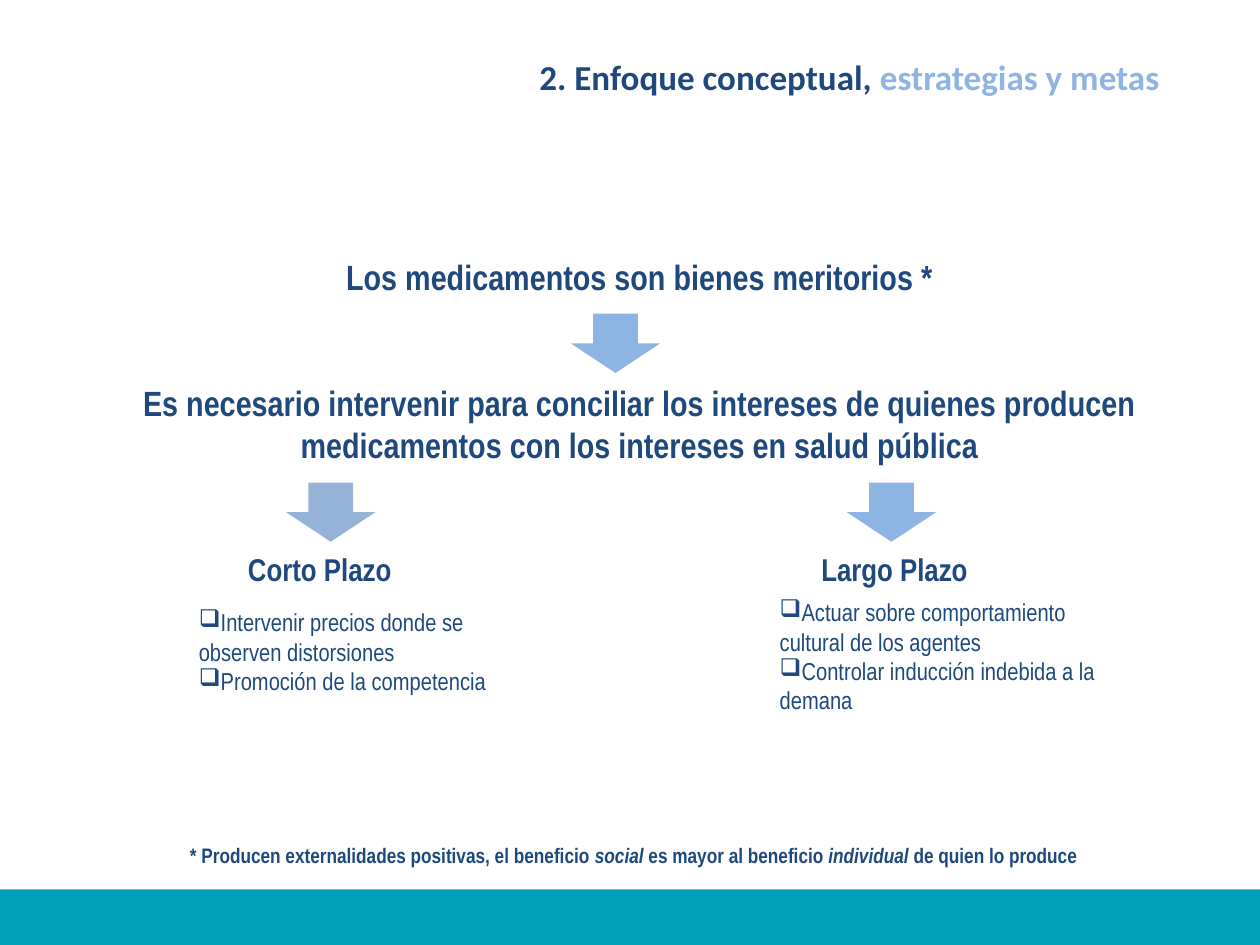
"""Build the slide on the conceptual approach, strategies and goals for medicines."""
from lxml import etree
from pptx import Presentation
from pptx.dml.color import RGBColor
from pptx.enum.shapes import MSO_SHAPE
from pptx.enum.text import PP_ALIGN
from pptx.oxml.ns import qn
from pptx.util import Inches, Pt

RECTANGLE, DOWN_ARROW = MSO_SHAPE.RECTANGLE, MSO_SHAPE.DOWN_ARROW
LEFT, CENTER, RIGHT = PP_ALIGN.LEFT, PP_ALIGN.CENTER, PP_ALIGN.RIGHT
NAVY = RGBColor(0x1F, 0x49, 0x7D)
SKY = RGBColor(0x8E, 0xB4, 0xE3)
STEEL = RGBColor(0x95, 0xB3, 0xD7)
TEAL = RGBColor(0x00, 0xA0, 0xBA)

prs = Presentation()
prs.slide_width, prs.slide_height = Inches(10), Inches(7.5)
slide = prs.slides.add_slide(prs.slide_layouts[6])


def add_block(kind, left, top, width, height, color):
    block = slide.shapes.add_shape(
        kind, Inches(left), Inches(top), Inches(width), Inches(height))
    block.shadow.inherit = False
    block.fill.solid()
    block.fill.fore_color.rgb = color
    block.line.fill.background()


def add_text(left, top, width, height, paragraphs, size, align=LEFT,
             font="Arial Narrow", bold=True, bullet=None, wrap=True):
    frame = slide.shapes.add_textbox(
        Inches(left), Inches(top), Inches(width), Inches(height)).text_frame
    frame.word_wrap = wrap
    for index, pieces in enumerate(paragraphs):
        paragraph = frame.add_paragraph() if index else frame.paragraphs[0]
        paragraph.alignment = align
        if bullet:
            properties = paragraph._p.get_or_add_pPr()
            properties.set("marL", "0")
            properties.set("indent", "0")
            etree.SubElement(properties, qn("a:buChar")).set("char", bullet)
        for words, color, italic in pieces:
            run = paragraph.add_run()
            run.text = words
            run.font.name = font
            run.font.size = Pt(size)
            run.font.bold = bold
            run.font.italic = italic
            run.font.color.rgb = color


add_block(RECTANGLE, 0, 7.06, 10, 0.44, TEAL)

add_text(3.52, 0.39, 5.78, 0.44,
         [[("2. Enfoque conceptual, ", NAVY, False),
           ("estrategias y metas", SKY, False)]], 20, RIGHT, "Calibri")

statements = [
    (1.98, 0.43, "Los medicamentos son bienes meritorios *"),
    (2.98, 0.77, "Es necesario intervenir para conciliar los intereses de "
                 "quienes producen medicamentos con los intereses en salud pública"),
]
for top, height, statement in statements:
    add_text(0.39, top, 9.37, height, [[(statement, NAVY, False)]], 20, CENTER)

for left, top, color in [(4.53, 2.49, SKY), (2.27, 3.83, STEEL), (6.72, 3.83, SKY)]:
    add_block(DOWN_ARROW, left, top, 0.71, 0.47, color)

horizons = [
    ("Corto Plazo", 1.87, (1.48, 4.77, 2.97, 0.81),
     ["Intervenir precios donde se observen distorsiones",
      "Promoción de la competencia"]),
    ("Largo Plazo", 6.42, (6.09, 4.69, 2.73, 1.04),
     ["Actuar sobre comportamiento cultural de los agentes",
      "Controlar inducción indebida a la demana"]),
]
for heading, heading_left, actions_area, actions in horizons:
    add_text(heading_left, 4.32, 1.6, 0.4, [[(heading, NAVY, False)]], 18)
    add_text(*actions_area, [[(action, NAVY, False)] for action in actions],
             14, bold=False, bullet="❑")

add_text(1.41, 6.64, 7.37, 0.3,
         [[("* Producen externalidades positivas, el beneficio ", NAVY, False),
           ("social", NAVY, True),
           (" es mayor al beneficio ", NAVY, False),
           ("individual ", NAVY, True),
           ("de quien lo produce", NAVY, False)]], 12, wrap=False)

prs.save("out.pptx")
